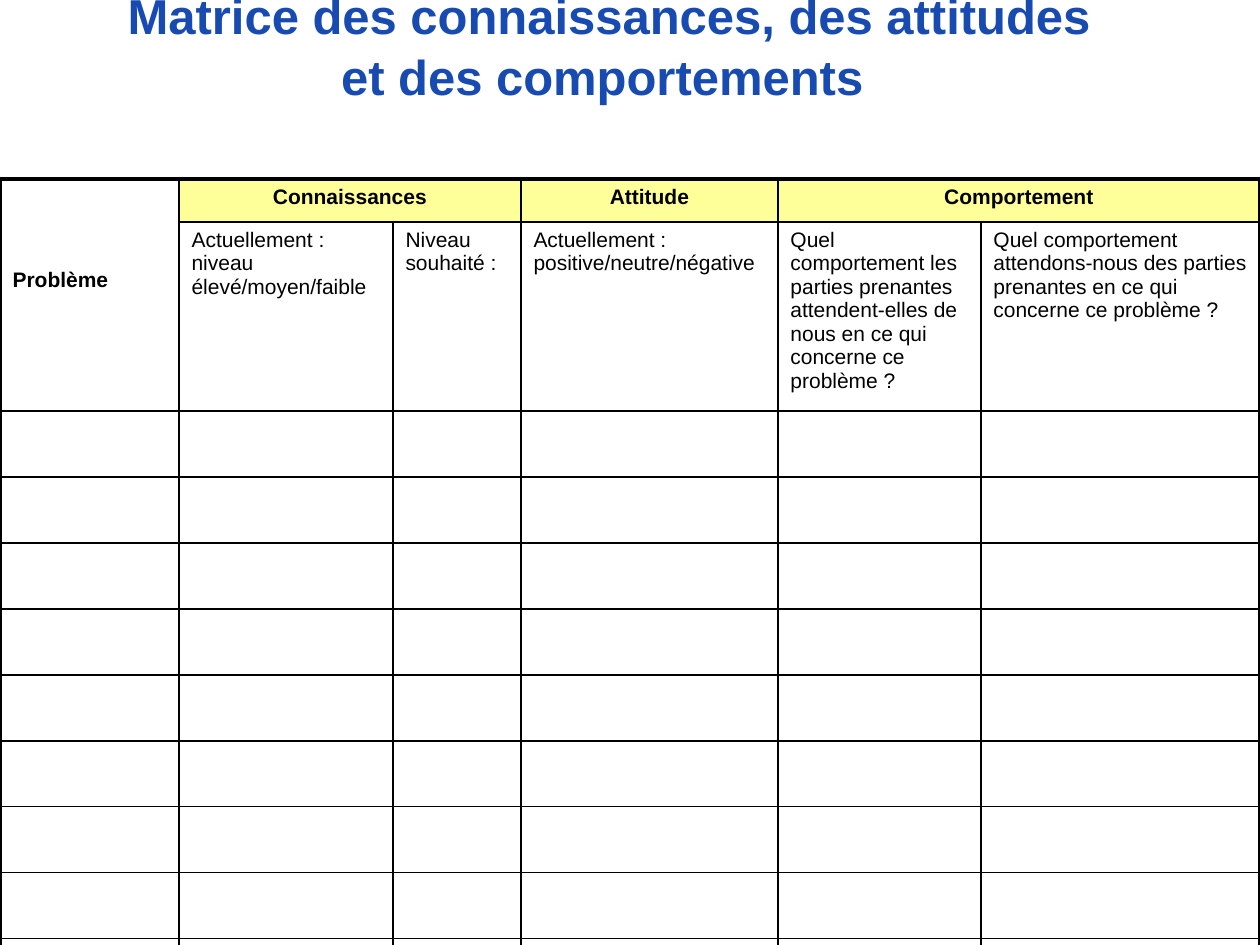
from lxml.etree import SubElement
from pptx import Presentation
from pptx.dml.color import RGBColor
from pptx.enum.text import MSO_ANCHOR, PP_ALIGN
from pptx.oxml.ns import qn
from pptx.util import Emu, Pt

PX = 914400 // 126
COLORS = {"title": "184BB2", "text": "000000", "line": "000000",
          "head": "FFFF99", "cell": "FFFFFF"}

TITLE = "Matrice des connaissances, des attitudes\vet des comportements "
TITLE_BOX = (21, 0, 1176, 88)
# first column, columns covered, heading
GROUPS = [(1, 2, "Connaissances"), (3, 1, "Attitude"), (4, 2, "Comportement")]
TOPICS = [
    "Actuellement : niveau élevé/moyen/faible",
    "Niveau souhaité :",
    "Actuellement : positive/neutre/négative",
    "Quel comportement les parties prenantes attendent-elles de nous "
    "en ce qui concerne ce problème ?",
    "Quel comportement attendons-nous des parties prenantes "
    "en ce qui concerne ce problème ?",
]
COLS = [179, 214, 128, 257, 203, 279]
ROWS = [43, 189] + [66] * 10
TOP = 179
THIN, THICK = 1, 2.25


def px(n):
    return Emu(n * PX)


def style(par, size, color, bold, align):
    par.alignment = align
    looks = {"name": "Arial", "size": Pt(size), "bold": bold}
    for run in par.runs:
        for key, value in looks.items():
            setattr(run.font, key, value)
        run.font.color.rgb = RGBColor.from_string(COLORS[color])


def write(cell, text, bold=False, align=PP_ALIGN.LEFT):
    cell.text = text
    style(cell.text_frame.paragraphs[0], 12, "text", bold, align)


def border(cell, row, col):
    """Draw thick lines on the table's rim and thin ones inside."""
    rim = {
        "L": col == 0,
        "R": col + cell.span_width == len(COLS),
        "T": row == 0,
        "B": row + cell.span_height == len(ROWS),
    }
    props = cell._tc.get_or_add_tcPr()
    for side, outer in rim.items():
        width = Pt(THICK if outer else THIN)
        line = SubElement(props, qn(f"a:ln{side}"), w=str(int(width)))
        fill = SubElement(line, qn("a:solidFill"))
        SubElement(fill, qn("a:srgbClr"), val=COLORS["line"])


def add_title(slide):
    title = slide.shapes.title
    box = dict(zip(("left", "top", "width", "height"), map(px, TITLE_BOX)))
    for key, value in box.items():
        setattr(title, key, value)
    frame = title.text_frame
    frame.text = TITLE
    frame.word_wrap = True
    frame.vertical_anchor = MSO_ANCHOR.MIDDLE
    par = frame.paragraphs[0]
    par.line_spacing = 1.05
    style(par, 28, "title", True, PP_ALIGN.CENTER)


def add_matrix(slide):
    table = slide.shapes.add_table(
        len(ROWS), len(COLS), 0, px(TOP), px(sum(COLS)), px(sum(ROWS))).table
    table.first_row = table.horz_banding = False
    for col, width in zip(table.columns, COLS):
        col.width = px(width)
    for row, height in zip(table.rows, ROWS):
        row.height = px(height)

    issue = table.cell(0, 0)
    issue.merge(table.cell(1, 0))
    write(issue, "Problème", bold=True)
    issue.margin_top = px(89)
    for col, span, text in GROUPS:
        head = table.cell(0, col)
        if span > 1:
            head.merge(table.cell(0, col + span - 1))
        write(head, text, True, PP_ALIGN.CENTER)
    for col, text in enumerate(TOPICS, 1):
        write(table.cell(1, col), text)

    for r in range(len(ROWS)):
        for c in range(len(COLS)):
            cell = table.cell(r, c)
            border(cell, r, c)
            cell.fill.solid()
            name = "head" if r == 0 and c > 0 else "cell"
            cell.fill.fore_color.rgb = RGBColor.from_string(COLORS[name])


def main():
    deck = Presentation()
    deck.slide_width, deck.slide_height = px(1260), px(945)
    slide = deck.slides.add_slide(deck.slide_layouts[5])
    add_matrix(slide)
    add_title(slide)
    deck.save("out.pptx")


if __name__ == "__main__":
    main()
